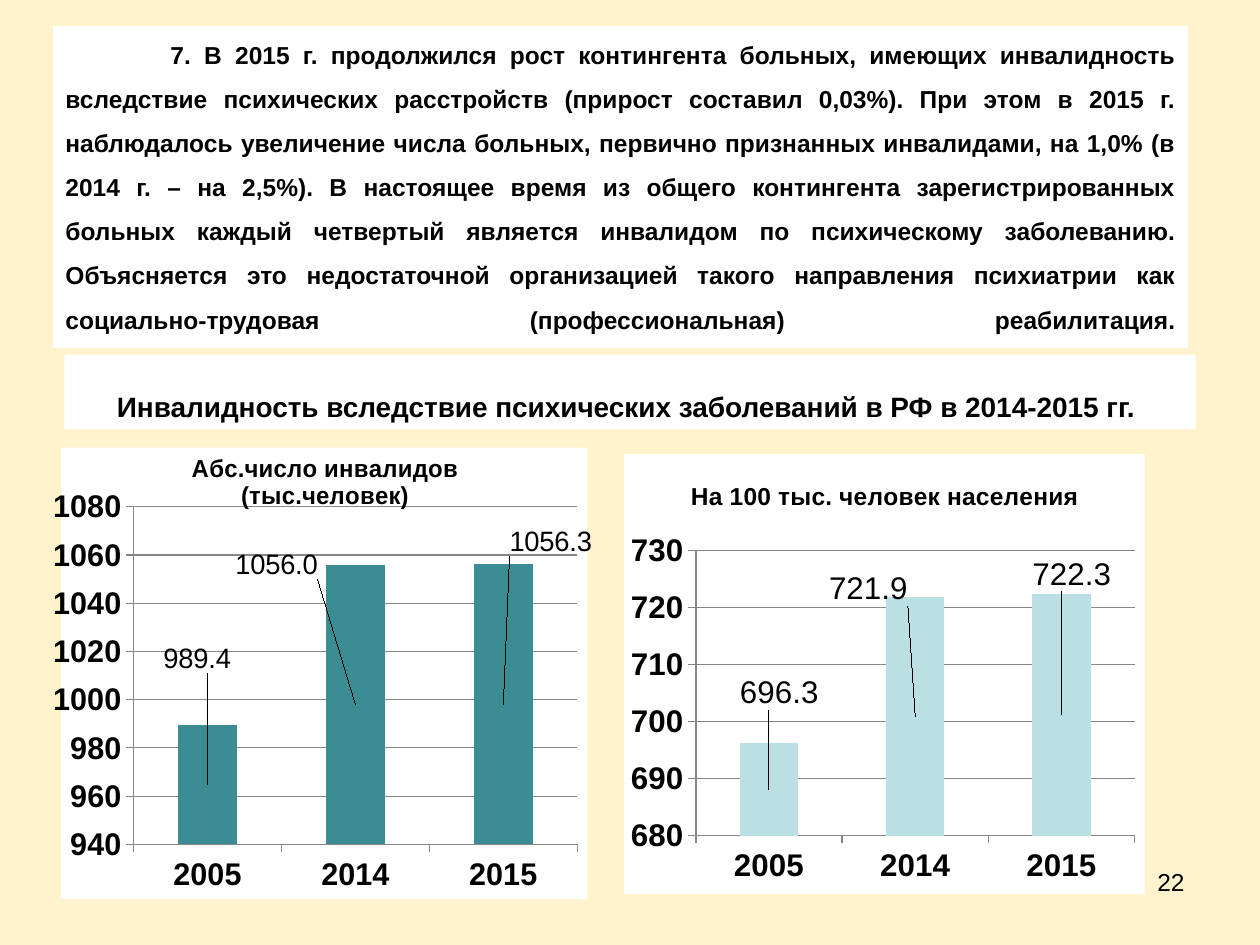
from dataclasses import dataclass

from lxml.etree import SubElement
from pptx import Presentation
from pptx.chart.data import CategoryChartData
from pptx.dml.color import RGBColor
from pptx.enum.chart import XL_CHART_TYPE, XL_LABEL_POSITION, XL_TICK_MARK
from pptx.enum.text import MSO_ANCHOR, PP_ALIGN
from pptx.oxml import parse_xml
from pptx.oxml.ns import nsdecls, qn
from pptx.util import Pt

FONT = "Arial"
BLACK, WHITE, GRID = "000000", "FFFFFF", "868686"
YEARS = ("2005", "2014", "2015")


@dataclass
class Panel:
    text: str
    box: tuple[float, float, float, float]
    size: float
    paragraph: dict
    frame: dict
    bold: bool = True
    fill: str | None = WHITE


@dataclass
class BarChart:
    title: str
    title_at: tuple[float, float]
    box: tuple[float, float, float, float]
    plot: tuple[float, float, float, float]
    values: tuple[float, ...]
    label_offsets: tuple[tuple[float, float], ...]
    label_size: float
    color: str
    scale: tuple[int, int, int]


PANELS = (
    Panel(
        "7. В 2015 г. продолжился рост контингента больных, имеющих инвалидность "
        "вследствие психических расстройств (прирост составил 0,03%). При этом в 2015 г. "
        "наблюдалось увеличение числа больных, первично признанных инвалидами, на 1,0% "
        "(в 2014 г. – на 2,5%). В настоящее время из общего контингента зарегистрированных "
        "больных каждый четвертый является инвалидом по психическому заболеванию. "
        "Объясняется это недостаточной организацией такого направления психиатрии как "
        "социально-трудовая (профессиональная) реабилитация.\v",
        (30.3, 15, 648.7, 184), 14,
        {"alignment": PP_ALIGN.JUSTIFY, "line_spacing": 1.5},
        {"vertical_anchor": MSO_ANCHOR.MIDDLE, "margin_top": Pt(11.6)},
    ),
    Panel(
        "Инвалидность вследствие психических заболеваний в РФ в 2014-2015 гг. ",
        (36.8, 202.7, 646.5, 42.5), 16,
        {"alignment": PP_ALIGN.CENTER},
        {"vertical_anchor": MSO_ANCHOR.BOTTOM},
    ),
    Panel("22", (516, 492, 168, 37), 14, {"alignment": PP_ALIGN.RIGHT}, {},
          bold=False, fill=None),
)

CHARTS = (
    BarChart("На 100 тыс. человек населения", (0.12, 0.05),
             (356.6, 259.5, 297.5, 251.5), (0.138, 0.219, 0.843, 0.648),
             (696.3, 721.9, 722.3), ((0.02, -0.22), (-0.09, -0.29), (0.02, -0.32)),
             17.9, "BBE0E3", (680, 730, 10)),
    BarChart("Абс.число инвалидов (тыс.человек)", (0.24, 0),
             (30.3, 255.8, 308, 258), (0.138, 0.131, 0.843, 0.748),
             (989.4, 1056.0, 1056.3), ((-0.02, -0.28), (-0.15, -0.31), (0.09, -0.36)),
             16, "3C8C93", (940, 1080, 20)),
)


def rgb(value: str) -> RGBColor:
    return RGBColor.from_string(value)


def set_all(target, values: dict) -> None:
    for name, value in values.items():
        setattr(target, name, value)


def style_font(font, size: float, bold: bool) -> None:
    set_all(font, {"name": FONT, "size": Pt(size), "bold": bold})
    font.color.rgb = rgb(BLACK)


def layout_xml(**entries):
    layout = parse_xml(f"<c:layout {nsdecls('c')}/>")
    manual = SubElement(layout, qn("c:manualLayout"))
    for name, value in entries.items():
        SubElement(manual, qn(f"c:{name}")).set("val", str(value))
    return layout


def add_panel(slide, panel: Panel) -> None:
    box = slide.shapes.add_textbox(*map(Pt, panel.box))
    if panel.fill:
        box.fill.solid()
        box.fill.fore_color.rgb = rgb(panel.fill)
    frame = box.text_frame
    set_all(frame, {"word_wrap": True, **panel.frame})
    paragraph = frame.paragraphs[0]
    paragraph.text = panel.text
    set_all(paragraph, panel.paragraph)
    style_font(paragraph.font, panel.size, panel.bold)
    if panel.paragraph["alignment"] == PP_ALIGN.JUSTIFY:
        paragraph._p.get_or_add_pPr().set("indent", str(Pt(60)))
    for run in paragraph.runs:
        style_font(run.font, panel.size, panel.bold)


def place_title(chart, spec: BarChart) -> None:
    title = chart.chart_title
    title.text_frame.text = spec.title
    style_font(title.text_frame.paragraphs[0].runs[0].font, 14, True)
    element = title._element
    for old in element.findall(qn("c:layout")):
        element.remove(old)
    x, y = spec.title_at
    element.find(qn("c:tx")).addnext(layout_xml(xMode="edge", yMode="edge", x=x, y=y))


def hide_leader_lines(labels) -> None:
    for old in labels.findall(qn("c:showLeaderLines")):
        labels.remove(old)
    labels.append(parse_xml(
        f'<c:extLst {nsdecls("c")}><c:ext uri="{{CE6537A1-D6FC-4f65-9D91-7224C49458BB}}" '
        'xmlns:c15="http://schemas.microsoft.com/office/drawing/2012/chart">'
        '<c15:showLeaderLines val="0"/></c:ext></c:extLst>'))


def place_labels(series, spec: BarChart) -> None:
    for point_index in range(len(spec.values)):
        label = series.points[point_index].data_label
        style_font(label.font, spec.label_size, False)
        label.position = XL_LABEL_POSITION.CENTER
    labels = series._element.find(qn("c:dLbls"))
    for element, (x, y) in zip(labels.iter(qn("c:dLbl")), spec.label_offsets):
        number = parse_xml(
            f'<c:numFmt {nsdecls("c")} formatCode="0.0" sourceLinked="0"/>')
        element.insert(1, layout_xml(x=x, y=y))
        element.insert(2, number)
    hide_leader_lines(labels)


def add_bar_chart(slide, spec: BarChart) -> None:
    data = CategoryChartData(number_format="0.0")
    data.categories = YEARS
    data.add_series("Series 1", spec.values)
    chart = slide.shapes.add_chart(
        XL_CHART_TYPE.COLUMN_STACKED, *map(Pt, spec.box), data).chart
    chart.has_legend = False
    style_font(chart.font, 17.9, False)
    place_title(chart, spec)

    # White chart area and fixed plot area
    chart._chartSpace.find(qn("c:txPr")).addprevious(parse_xml(
        f'<c:spPr {nsdecls("c", "a")}><a:solidFill><a:srgbClr val="{WHITE}"/>'
        "</a:solidFill><a:ln><a:noFill/></a:ln></c:spPr>"))
    plot_area = chart._chartSpace.chart.plotArea
    for old in plot_area.findall(qn("c:layout")):
        plot_area.remove(old)
    x, y, w, h = spec.plot
    plot_area.insert(0, layout_xml(layoutTarget="inner", xMode="edge", yMode="edge",
                                   x=x, y=y, w=w, h=h))

    # Axes
    low, high, step = spec.scale
    set_all(chart.value_axis, {"minimum_scale": low, "maximum_scale": high,
                               "major_unit": step, "has_major_gridlines": True})
    set_all(chart.value_axis.tick_labels,
            {"number_format": "0", "number_format_is_linked": False})
    for axis in (chart.category_axis, chart.value_axis):
        axis.major_tick_mark = XL_TICK_MARK.OUTSIDE
        style_font(axis.tick_labels.font, 17.9, True)
        axis.format.line.color.rgb = rgb(GRID)
    chart.value_axis.major_gridlines.format.line.color.rgb = rgb(GRID)

    # Columns
    plot = chart.plots[0]
    set_all(plot, {"gap_width": 150, "overlap": 100, "vary_by_categories": False})
    series = plot.series[0]
    series.format.fill.solid()
    series.format.fill.fore_color.rgb = rgb(spec.color)
    place_labels(series, spec)


def main() -> None:
    deck = Presentation()
    set_all(deck, {"slide_width": Pt(720), "slide_height": Pt(540)})
    slide = deck.slides.add_slide(deck.slide_layouts[6])
    slide.background.fill.solid()
    slide.background.fill.fore_color.rgb = rgb("FFF3CD")
    for panel in PANELS:
        add_panel(slide, panel)
    for spec in CHARTS:
        add_bar_chart(slide, spec)
    deck.save("out.pptx")


if __name__ == "__main__":
    main()
